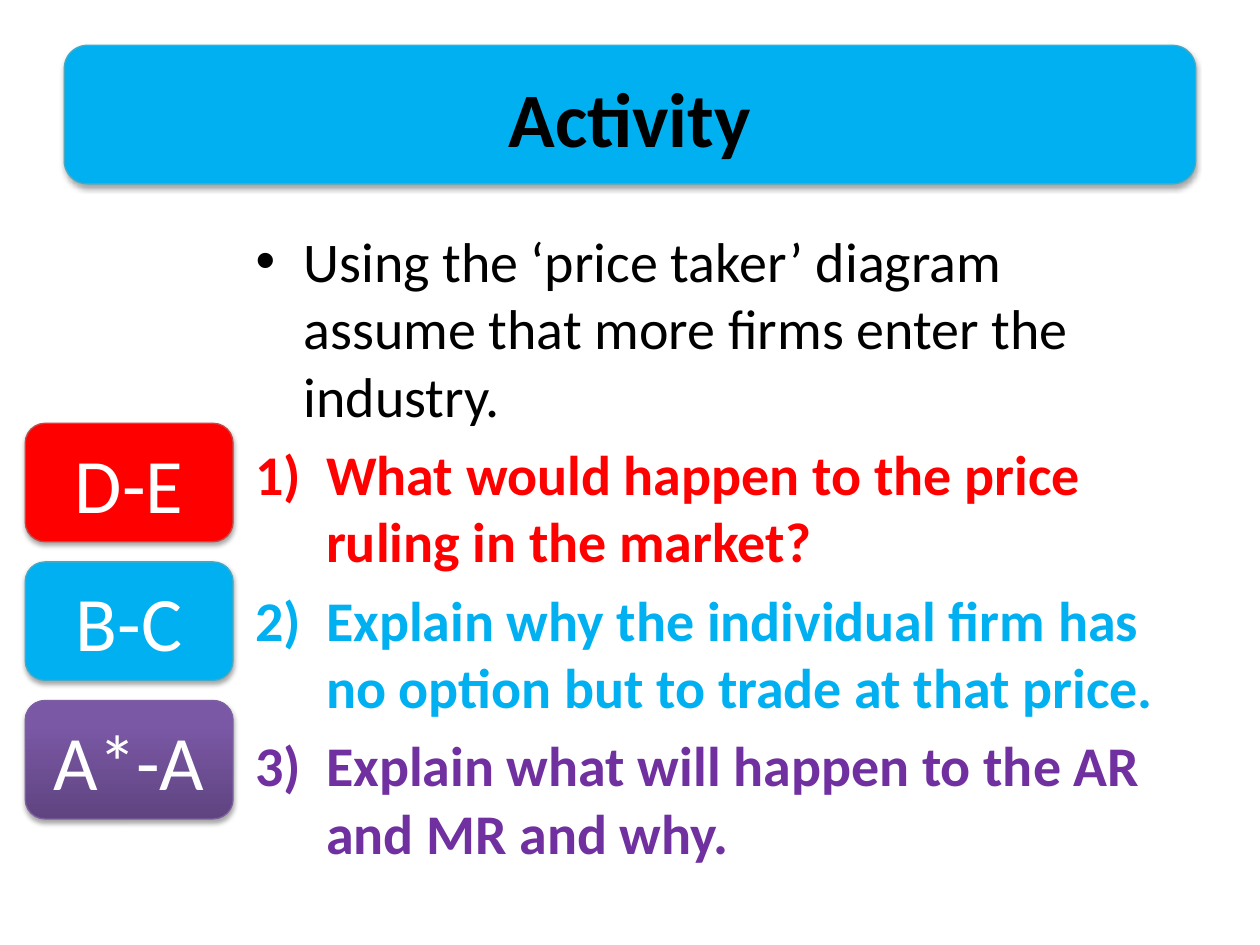
import pptx
import pptx.dml.color
import pptx.enum.shapes
import pptx.enum.text
import pptx.oxml
import pptx.oxml.ns
import pptx.util
from pptx.util import Inches, Pt

RGBColor = pptx.dml.color.RGBColor
BLACK = RGBColor(0x00, 0x00, 0x00)
WHITE = RGBColor(0xFF, 0xFF, 0xFF)
RED = RGBColor(0xFF, 0x00, 0x00)
RED_LINE = RGBColor(0xBF, 0x4C, 0x48)
BLUE = RGBColor(0x00, 0xB0, 0xF0)
BLUE_LINE = RGBColor(0x46, 0xAA, 0xC5)
PURPLE = RGBColor(0x70, 0x30, 0xA0)
PURPLE_LINE = RGBColor(0x7D, 0x60, 0xA0)
PURPLE_DARK = RGBColor(0x5F, 0x44, 0x80)
PURPLE_LIGHT = RGBColor(0x7B, 0x58, 0xA6)

FONT = "Calibri"
SHADOW = (
    f'<a:effectLst {pptx.oxml.ns.nsdecls("a")}>'
    f'<a:outerShdw blurRad="{Pt(3.1)}" dist="{Pt(1.8)}" dir="5400000" rotWithShape="0">'
    '<a:srgbClr val="000000"><a:alpha val="35000"/></a:srgbClr>'
    "</a:outerShdw></a:effectLst>"
)

INTRO = "Using the ‘price taker’ diagram assume that more firms enter the industry."
QUESTIONS = [
    ("What would happen to the price ruling in the market?", RED),
    ("Explain why the individual firm has no option but to trade at that price.", BLUE),
    ("Explain what will happen to the AR and MR and why.", PURPLE),
]
# Label, fill colours (two make a gradient from the bottom up), line colour
GRADES = [
    ("D-E", [RED], RED_LINE),
    ("B-C", [BLUE], BLUE_LINE),
    ("A*-A", [PURPLE_DARK, PURPLE_LIGHT], PURPLE_LINE),
]


def add_panel(slide, box, fills, line_color):
    """Rounded rectangle with a soft shadow below it."""
    kind = pptx.enum.shapes.MSO_SHAPE.ROUNDED_RECTANGLE
    shape = slide.shapes.add_shape(kind, *map(Inches, box))
    if len(fills) == 1:
        shape.fill.solid()
        shape.fill.fore_color.rgb = fills[0]
    else:
        shape.fill.gradient()
        shape.fill.gradient_angle = 90
        for stop, color, position in zip(shape.fill.gradient_stops, fills, (0, 0.8)):
            stop.color.rgb = color
            stop.position = position
    shape.line.color.rgb = line_color
    shape.line.width = Pt(0.75)
    shape._element.spPr.append(pptx.oxml.parse_xml(SHADOW))
    return shape


def write_paragraph(paragraph, text, size, color, bold=False):
    paragraph.text = text
    font = paragraph.runs[0].font
    font.name, font.size, font.bold = FONT, Pt(size), bold
    font.color.rgb = color


def write_centred(shape, text, color, bold=False):
    text_frame = shape.text_frame
    text_frame.word_wrap = True
    text_frame.vertical_anchor = pptx.enum.text.MSO_ANCHOR.MIDDLE
    paragraph = text_frame.paragraphs[0]
    write_paragraph(paragraph, text, 44, color, bold)
    paragraph.alignment = pptx.enum.text.PP_ALIGN.CENTER


def set_bullet(paragraph, indent, marker, **attributes):
    properties = paragraph._p.get_or_add_pPr()
    properties.set("marL", str(Inches(indent)))
    properties.set("indent", str(-Inches(indent)))
    font = properties.makeelement(pptx.oxml.ns.qn("a:buFont"), {"typeface": "Arial" if marker == "buChar" else FONT})
    bullet = properties.makeelement(pptx.oxml.ns.qn(f"a:{marker}"), attributes)
    properties.extend([font, bullet])


def add_title(slide, left, top, width, height):
    add_panel(slide, (left + 0.01, top + 0.06, width - 0.02, 1.1), [BLUE], BLUE_LINE)
    title = slide.shapes.add_textbox(*map(Inches, (left, top, width, height)))
    write_centred(title, "Activity", BLACK, bold=True)


def add_questions(slide, left, top, width, height):
    body = slide.shapes.add_textbox(*map(Inches, (left, top, width, height)))
    text_frame = body.text_frame
    text_frame.word_wrap = True
    intro = text_frame.paragraphs[0]
    write_paragraph(intro, INTRO, 32, BLACK)
    intro.space_before = Pt(6.4)
    set_bullet(intro, 0.38, "buChar", char="•")
    for text, color in QUESTIONS:
        question = text_frame.add_paragraph()
        write_paragraph(question, text, 32, color, bold=True)
        question.space_before = Pt(6.4)
        set_bullet(question, 0.56, "buAutoNum", type="arabicParenR")


def add_grades(slide, left, top, width, height):
    pitch = height / len(GRADES)
    for row, (label, fills, line_color) in enumerate(GRADES):
        box = (left, top + row * pitch, width, 0.94)
        write_centred(add_panel(slide, box, fills, line_color), label, WHITE)


def main():
    presentation = pptx.Presentation()
    presentation.slide_width, presentation.slide_height = Inches(10), Inches(7.5)
    slide = presentation.slides.add_slide(presentation.slide_layouts[6])
    add_title(slide, 0.5, 0.3, 9, 1.25)
    add_questions(slide, 1.93, 1.75, 7.57, 4.95)
    add_grades(slide, 0.2, 3.36, 1.65, 3.3)
    presentation.save("out.pptx")


if __name__ == "__main__":
    main()
